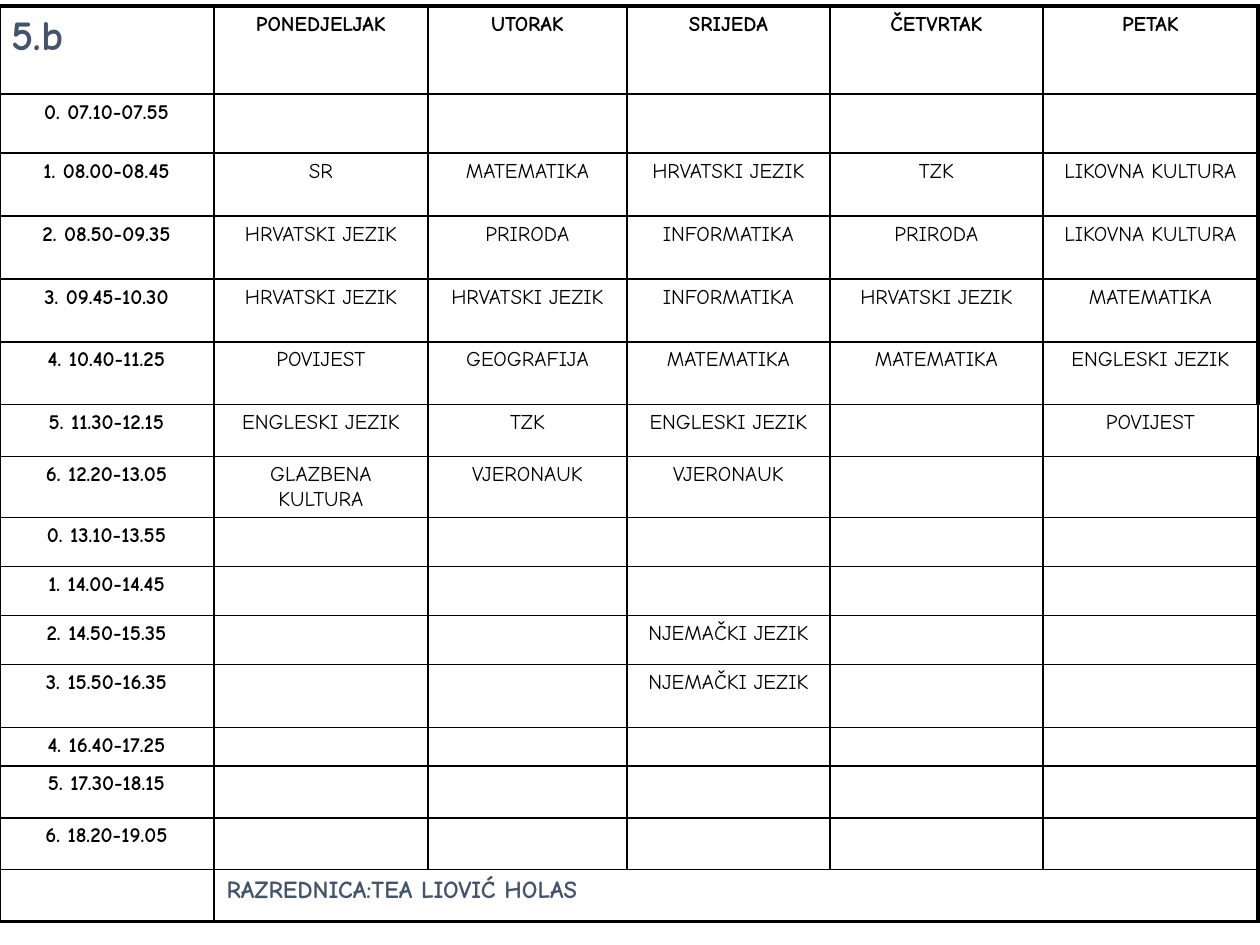
from lxml import etree
from pptx import Presentation
from pptx.dml.color import RGBColor
from pptx.enum.text import PP_ALIGN
from pptx.oxml.ns import qn
from pptx.util import Emu, Pt

CENTER, LEFT = PP_ALIGN.CENTER, PP_ALIGN.LEFT
PX = 914400 // 126
FONT = "Comic Neue"
COLORS = {"text": "000000", "accent": "44546A", "border": "000000", "paper": "FFFFFF"}
THIN, THICK = Pt(1), Pt(2.25)
TEXT_SIZE, CLASS_SIZE, TEACHER_SIZE = 12, 24, 14

CLASS_NAME = "5.b"
TEACHER = "RAZREDNICA:TEA LIOVIĆ HOLAS"
DAYS = ["PONEDJELJAK", "UTORAK", "SRIJEDA", "ČETVRTAK", "PETAK"]
LESSONS = [
    (59, "0. 07.10-07.55", []),
    (63, "1. 08.00-08.45", ["SR", "MATEMATIKA", "HRVATSKI JEZIK", "TZK", "LIKOVNA KULTURA"]),
    (63, "2. 08.50-09.35", ["HRVATSKI JEZIK", "PRIRODA", "INFORMATIKA", "PRIRODA", "LIKOVNA KULTURA"]),
    (63, "3. 09.45-10.30", ["HRVATSKI JEZIK", "HRVATSKI JEZIK", "INFORMATIKA", "HRVATSKI JEZIK", "MATEMATIKA"]),
    (63, "4. 10.40-11.25", ["POVIJEST", "GEOGRAFIJA", "MATEMATIKA", "MATEMATIKA", "ENGLESKI JEZIK"]),
    (52, "5. 11.30-12.15", ["ENGLESKI JEZIK", "TZK", "ENGLESKI JEZIK", "", "POVIJEST"]),
    (52, "6. 12.20-13.05", ["GLAZBENA KULTURA", "VJERONAUK", "VJERONAUK"]),
    (49, "0. 13.10-13.55", []),
    (49, "1. 14.00-14.45", []),
    (49, "2. 14.50-15.35", ["", "", "NJEMAČKI JEZIK"]),
    (63, "3. 15.50-16.35", ["", "", "NJEMAČKI JEZIK"]),
    (37, "4. 16.40-17.25", []),
    (52, "5. 17.30-18.15", []),
    (52, "6. 18.20-19.05", []),
]
ROWS = [(88, CLASS_NAME, DAYS)] + LESSONS + [(52, "", [TEACHER])]
COLUMN_WIDTHS = [215, 214, 199, 203, 213, 215]
TABLE_LEFT, TABLE_TOP, TABLE_HEIGHT = -1, 6, 944
LAST_ROW, LAST_COLUMN = len(ROWS) - 1, len(COLUMN_WIDTHS) - 1
THIN_EDGE_ROW = 6


def px(value):
    return Emu(value * PX)


def write_cell(cell, text, size, color, bold, alignment):
    paragraph = cell.text_frame.paragraphs[0]
    paragraph.alignment = alignment
    if not text:
        etree.SubElement(paragraph._p, qn("a:endParaRPr"), sz=str(size * 100))
        return
    run = paragraph.add_run()
    run.text = text
    run.font.name = FONT
    run.font.size = Pt(size)
    run.font.bold = bold
    run.font.color.rgb = RGBColor.from_string(COLORS[color])


def draw_borders(cell, row, column):
    widths = {
        "a:lnL": THICK if column == 0 else THIN,
        "a:lnR": THICK if column == LAST_COLUMN and row != THIN_EDGE_ROW else THIN,
        "a:lnT": THICK if row == 0 else THIN,
        "a:lnB": THICK if row == LAST_ROW else THIN,
    }
    if cell.is_merge_origin:
        widths["a:lnR"] = THICK
    properties = cell._tc.get_or_add_tcPr()
    for tag, width in widths.items():
        line = etree.SubElement(properties, qn(tag), w=str(width))
        fill = etree.SubElement(line, qn("a:solidFill"))
        etree.SubElement(fill, qn("a:srgbClr"), val=COLORS["border"])


def text_style(row, column):
    if (row, column) == (0, 0):
        return CLASS_SIZE, "accent", True, LEFT
    if row == LAST_ROW and column == 1:
        return TEACHER_SIZE, "accent", True, LEFT
    return TEXT_SIZE, "text", row == 0 or column == 0, CENTER


def main():
    presentation = Presentation()
    presentation.slide_width, presentation.slide_height = px(1260), px(945)
    slide = presentation.slides.add_slide(presentation.slide_layouts[6])
    frame = slide.shapes.add_table(
        len(ROWS), len(COLUMN_WIDTHS), px(TABLE_LEFT), px(TABLE_TOP),
        px(sum(COLUMN_WIDTHS)), px(TABLE_HEIGHT))
    table = frame.table
    table.first_row = table.horz_banding = False
    for column, width in zip(table.columns, COLUMN_WIDTHS):
        column.width = px(width)
    table.cell(LAST_ROW, 1).merge(table.cell(LAST_ROW, LAST_COLUMN))

    for row, (height, label, subjects) in enumerate(ROWS):
        table.rows[row].height = px(height)
        texts = [label] + subjects
        texts += [""] * (len(COLUMN_WIDTHS) - len(texts))
        for column, text in enumerate(texts):
            cell = table.cell(row, column)
            write_cell(cell, text, *text_style(row, column))
            draw_borders(cell, row, column)
            cell.fill.solid()
            cell.fill.fore_color.rgb = RGBColor.from_string(COLORS["paper"])
    frame.height = px(TABLE_HEIGHT)
    presentation.save("out.pptx")


if __name__ == "__main__":
    main()
